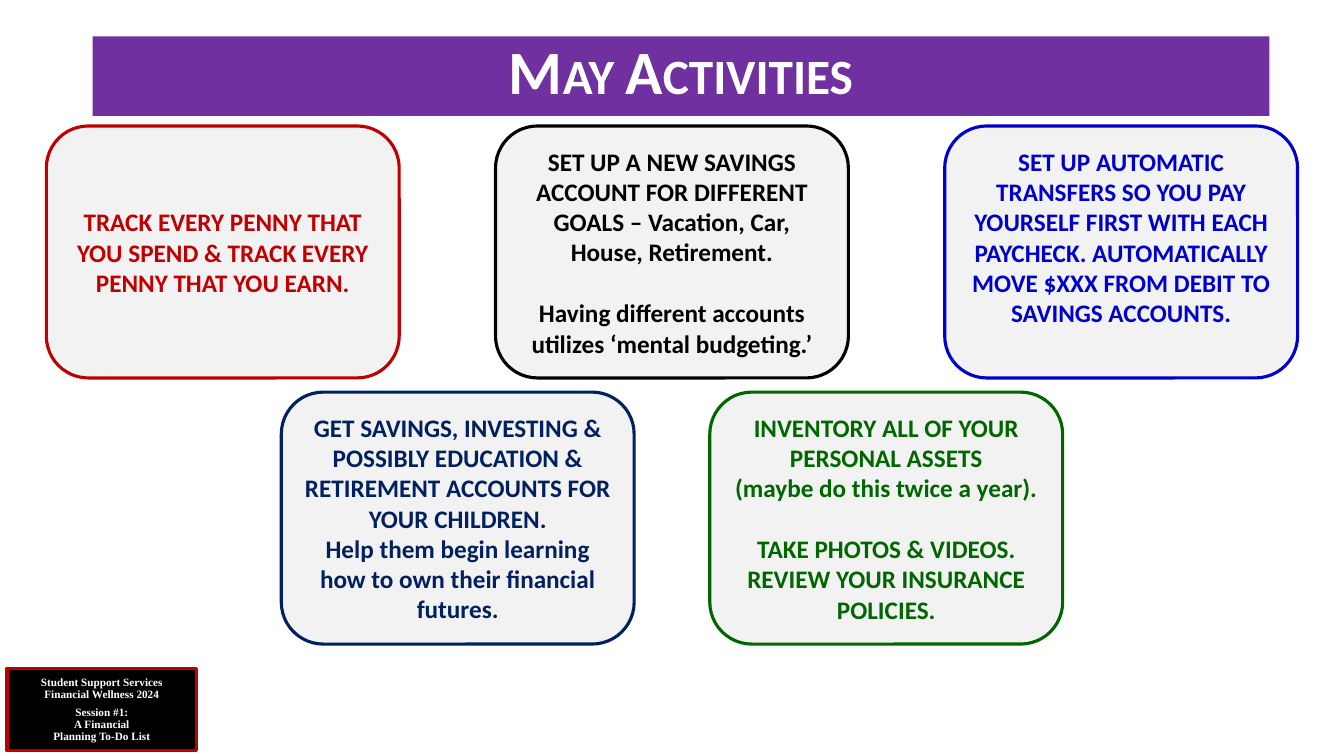
"""Build the May Activities slide: a title banner, five activity cards and a session label."""
from copy import deepcopy

from pptx import Presentation
from pptx.dml.color import RGBColor
from pptx.enum.shapes import MSO_SHAPE
from pptx.enum.text import MSO_ANCHOR, PP_ALIGN
from pptx.oxml.ns import qn
from pptx.util import Inches, Pt

RECTANGLE = MSO_SHAPE.RECTANGLE
ROUNDED = MSO_SHAPE.ROUNDED_RECTANGLE
TOP, MIDDLE = MSO_ANCHOR.TOP, MSO_ANCHOR.MIDDLE
CENTER = PP_ALIGN.CENTER

COLORS = {
    "white": "FFFFFF",
    "black": "000000",
    "purple": "7030A0",
    "card": "F2F2F2",
    "red": "C00000",
    "blue": "0000CC",
    "navy": "002060",
    "green": "006600",
}
CARD_WIDTH, CARD_HEIGHT = 3.5, 2.5
BLANK_LINE = 22


def color(name):
    return RGBColor.from_string(COLORS[name])


def add_box(texts, left, top, width, height, *, geometry=RECTANGLE, fill, line=None,
            font="Calibri", size=18, text_color="white", anchor=MIDDLE,
            line_spacing=1.0, gaps=(), bottom_inset=0.05, small_caps=False):
    shape = slide.shapes.add_shape(
        geometry, Inches(left), Inches(top), Inches(width), Inches(height))
    shape.shadow.inherit = False
    shape.fill.solid()
    shape.fill.fore_color.rgb = color(fill)
    if line:
        shape.line.color.rgb = color(line)
        shape.line.width = Pt(2.25)
    else:
        shape.line.fill.background()
    frame = shape.text_frame
    frame.word_wrap = True
    frame.vertical_anchor = anchor
    frame.margin_bottom = Inches(bottom_inset)
    for index, text in enumerate(texts):
        paragraph = frame.paragraphs[0] if index == 0 else frame.add_paragraph()
        paragraph.text = text
        paragraph.alignment = CENTER
        paragraph.line_spacing = line_spacing
        if index and gaps:
            paragraph.space_before = Pt(gaps[index - 1])
        for run in paragraph.runs:
            run.font.name = font
            run.font.size = Pt(size)
            run.font.bold = True
            run.font.color.rgb = color(text_color)
            if small_caps:
                run.font._element.set("cap", "small")
        for line_break in paragraph._p.findall(qn("a:br")):
            line_break.append(deepcopy(paragraph.runs[0].font._element))


presentation = Presentation()
presentation.slide_width = Inches(13.33)
presentation.slide_height = Inches(7.5)
slide = presentation.slides.add_slide(presentation.slide_layouts[6])

add_box(
    ["Student Support Services", "Financial Wellness 2024",
     "Session #1:\nA Financial\nPlanning To-Do List"],
    0.07, 6.63, 1.88, 0.82, fill="black", line="red", font="Times New Roman",
    size=8, line_spacing=0.9, gaps=(0, 4))

add_box(["May Activities"], 0.92, 0.36, 11.67, 0.79, fill="purple", size=44,
        anchor=TOP, line_spacing=0.9, small_caps=True)

card_rows = [
    (0.46, 1.25, 4.455, [
        ("red", 0.05, ["TRACK EVERY PENNY THAT YOU SPEND & TRACK EVERY PENNY THAT YOU EARN."]),
        ("black", 0.05, [
            "SET UP A NEW SAVINGS ACCOUNT FOR DIFFERENT GOALS – Vacation, Car, House, Retirement.",
            "Having different accounts utilizes ‘mental budgeting.’"]),
        ("blue", 0.35, [
            "SET UP AUTOMATIC TRANSFERS SO YOU PAY YOURSELF FIRST WITH EACH PAYCHECK. "
            "AUTOMATICALLY MOVE $XXX FROM DEBIT TO SAVINGS ACCOUNTS."]),
    ]),
    (2.79, 3.89, 4.25, [
        ("navy", 0.05, [
            "GET SAVINGS, INVESTING & POSSIBLY EDUCATION & RETIREMENT ACCOUNTS FOR YOUR CHILDREN.\n"
            "Help them begin learning how to own their financial futures."]),
        ("green", 0.05, [
            "INVENTORY ALL OF YOUR PERSONAL ASSETS\n(maybe do this twice a year).",
            "TAKE PHOTOS & VIDEOS. REVIEW YOUR INSURANCE POLICIES."]),
    ]),
]
for first_left, top, step, cards in card_rows:
    for column, (accent, bottom_inset, texts) in enumerate(cards):
        add_box(texts, first_left + column * step, top, CARD_WIDTH, CARD_HEIGHT,
                geometry=ROUNDED, fill="card", line=accent, text_color=accent,
                gaps=(BLANK_LINE,), bottom_inset=bottom_inset)

presentation.save("out.pptx")
